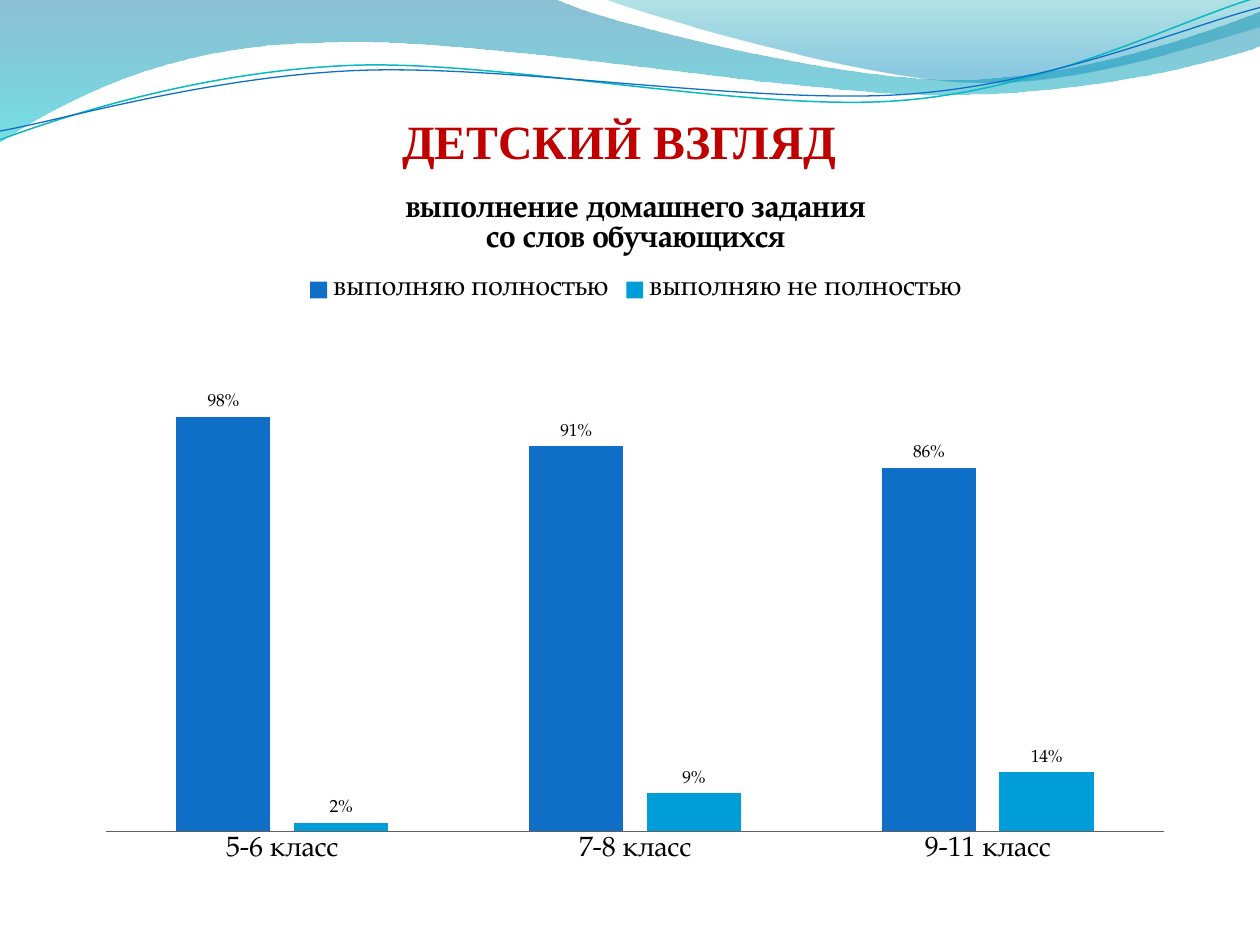
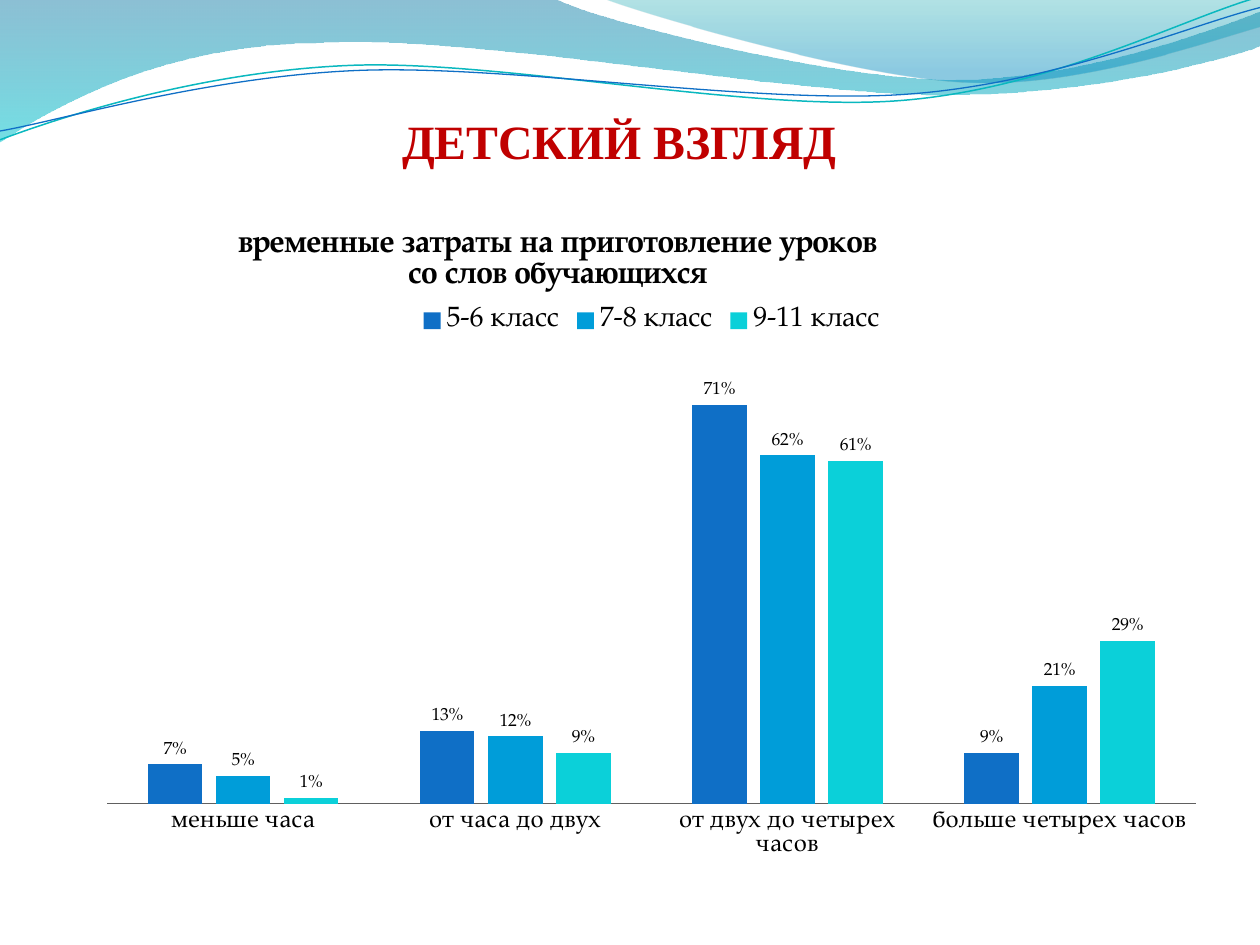
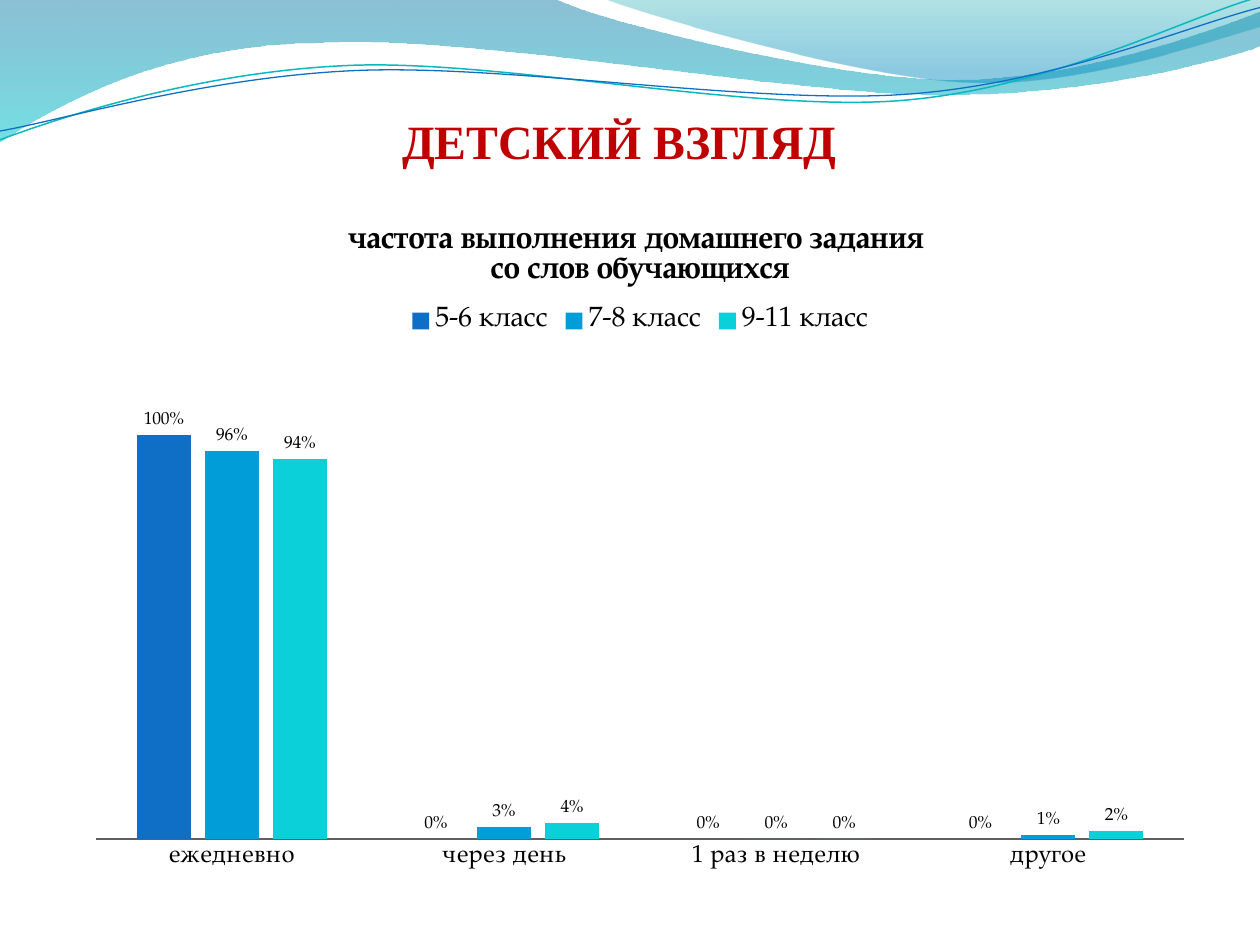
"""Build three slides of column charts on how pupils see their homework."""
import pptx
import pptx.chart.data
import pptx.dml.color
import pptx.enum.chart
import pptx.enum.text
import pptx.oxml.ns
import pptx.util
from lxml import etree

Inches = pptx.util.Inches
Pt = pptx.util.Pt
RGBColor = pptx.dml.color.RGBColor
qn = pptx.oxml.ns.qn

RED = RGBColor(0xC0, 0x00, 0x00)
BLACK = RGBColor(0x00, 0x00, 0x00)
GRAY = RGBColor(0x60, 0x60, 0x60)
BLUE = RGBColor(0x0F, 0x6F, 0xC6)
SKY = RGBColor(0x00, 0x9D, 0xD9)
AQUA = RGBColor(0x0B, 0xD0, 0xD9)
TEAL = RGBColor(0x0A, 0xB8, 0xBF)
SERIES_COLORS = (BLUE, SKY, AQUA)

TITLE = "ДЕТСКИЙ ВЗГЛЯД"
TITLE_FONT = "Times New Roman"
CHART_FONT = "TeX Gyre Pagella"
STEP_TAGS = {2: "a:lnTo", 6: "a:cubicBezTo"}

BANDS = [
    {
        "box": (-0.01, -0.01, 10.02, 1.14),
        "start": (0, -0.01),
        "steps": [
            (4.4, -0.01),
            (4.76, 0.17, 6.64, 0.63, 7.58, 0.63),
            (8.53, 0.63, 9.58, 0.26, 10, 0.09),
            (10.01, 0.36),
            (9.83, 0.44, 8.7, 0.76, 7.46, 0.75),
            (6.22, 0.75, 3.82, 0.28, 2.57, 0.34),
            (1.29, 0.35, 0.46, 0.83, -0.01, 1.13),
            (0, -0.01),
        ],
        "stops": [(0, RGBColor(0x00, 0x74, 0xA1), 45), (1, RGBColor(0x00, 0xC6, 0xCF), 55)],
    },
    {
        "box": (4.79, -0.01, 5.21, 0.7),
        "start": (4.79, -0.01),
        "steps": [
            (5.09, 0.11, 6.82, 0.62, 7.69, 0.65),
            (8.56, 0.69, 9.61, 0.32, 10, 0.21),
            (10, 0),
            (4.79, -0.01),
        ],
        "stops": [(0, RGBColor(0x00, 0xA1, 0xA9), 30), (0.8, RGBColor(0x00, 0x8B, 0xBF), 45)],
    },
]
STRANDS = [
    {
        "box": (0, -0.02, 9.98, 1.13),
        "start": (0, 1.11),
        "steps": [
            (0.48, 0.93, 1.58, 0.57, 2.77, 0.52),
            (3.95, 0.47, 5.93, 0.89, 7.13, 0.8),
            (8.33, 0.71, 9.38, 0.15, 9.98, -0.02),
        ],
        "line": (TEAL, 0.85),
    },
    {
        "box": (0, 0.06, 10, 0.98),
        "start": (0, 1.04),
        "steps": [
            (0.47, 0.96, 1.64, 0.61, 2.83, 0.56),
            (4.03, 0.51, 5.97, 0.83, 7.17, 0.75),
            (8.36, 0.67, 9.41, 0.21, 10, 0.06),
        ],
        "line": (BLUE, 0.75),
    },
]

CHARTS = [
    {
        "title": "выполнение домашнего задания\nсо слов обучающихся",
        "box": (0.67, 1.33, 8.75, 5.64),
        "plot": (0.84, 2.57, 8.4, 4.03),
        "max": 1.2,
        "category_size": 16,
        "categories": ["5-6 класс", "7-8 класс", "9-11 класс"],
        "series": {
            "выполняю полностью": (0.98, 0.91, 0.86),
            "выполняю не полностью": (0.02, 0.09, 0.14),
        },
    },
    {
        "title": "временные затраты на приготовление уроков\nсо слов обучающихся",
        "title_at": (1.86, 1.78),
        "box": (0.67, 1.58, 9, 5.33),
        "plot": (0.85, 2.81, 8.64, 3.57),
        "max": 0.8,
        "category_size": 14,
        "categories": ["меньше часа", "от часа до двух", "от двух до четырех часов", "больше четырех часов"],
        "series": {
            "5-6 класс": (0.07, 0.13, 0.71, 0.09),
            "7-8 класс": (0.05, 0.12, 0.62, 0.21),
            "9-11 класс": (0.01, 0.09, 0.61, 0.29),
        },
    },
    {
        "title": "частота выполнения домашнего задания \nсо слов обучающихся",
        "box": (0.58, 1.58, 9, 5.42),
        "plot": (0.76, 2.81, 8.64, 3.85),
        "max": 1.2,
        "category_size": 14,
        "categories": ["ежедневно", "через день", "1 раз в неделю", "другое"],
        "series": {
            "5-6 класс": (1, 0, 0, 0),
            "7-8 класс": (0.96, 0.03, 0, 0.01),
            "9-11 класс": (0.94, 0.04, 0, 0.02),
        },
    },
]


def add_wave(s, wave):
    """Add a freeform that fills its box, then give it curved steps."""
    left, top, width, height = map(Inches, wave["box"])
    builder = s.shapes.build_freeform(left, top)
    builder.add_line_segments([(left + width, top + height)], close=False)
    sp = builder.convert_to_shape()
    sp.shadow.inherit = False
    outline = next(sp.element.iter(qn("a:path")))
    for child in list(outline):
        outline.remove(child)
    moves = [("a:moveTo", wave["start"])]
    moves += [(STEP_TAGS[len(step)], step) for step in wave["steps"]]
    for tag, step in moves:
        move = etree.SubElement(outline, qn(tag))
        for x, y in zip(step[::2], step[1::2]):
            etree.SubElement(move, qn("a:pt"), x=str(Inches(x) - left), y=str(Inches(y) - top))
    return sp, outline


def add_waves(s):
    for band in BANDS:
        sp, outline = add_wave(s, band)
        etree.SubElement(outline, qn("a:close"))
        sp.line.fill.background()
        sp.fill.gradient()
        sp.fill.gradient_angle = 270
        for stop, (position, color, _) in zip(sp.fill.gradient_stops, band["stops"]):
            stop.position = position
            stop.color.rgb = color
        for clr, (_, _, opacity) in zip(sp.element.iter(qn("a:srgbClr")), band["stops"]):
            etree.SubElement(clr, qn("a:alpha"), val=str(opacity * 1000))
    for strand in STRANDS:
        sp, _ = add_wave(s, strand)
        sp.fill.background()
        color, width = strand["line"]
        sp.line.color.rgb = color
        sp.line.width = Pt(width)


def add_title(s):
    tf = s.shapes.add_textbox(Inches(0.25), Inches(0.83), Inches(9.33), Inches(1.42)).text_frame
    tf.word_wrap = True
    tf.vertical_anchor = pptx.enum.text.MSO_ANCHOR.TOP
    tf.margin_left = tf.margin_right = tf.margin_bottom = 0
    tf.margin_top = Inches(0.06)
    p = tf.paragraphs[0]
    p.text = TITLE
    p.alignment = pptx.enum.text.PP_ALIGN.CENTER
    p.font.name = TITLE_FONT
    p.font.size = Pt(27.3)
    p.font.bold = True
    p.font.color.rgb = RED


def set_layout(parent, box, place, inner=False):
    """Place a chart part, given in slide inches, within the chart's box."""
    layout = parent.find(qn("c:layout"))
    if layout is None:
        layout = etree.Element(qn("c:layout"))
        parent.insert(0, layout)
    manual = etree.SubElement(layout, qn("c:manualLayout"))
    if inner:
        etree.SubElement(manual, qn("c:layoutTarget"), val="inner")
    left, top, width, height = box
    for axis in "xy":
        etree.SubElement(manual, qn(f"c:{axis}Mode"), val="edge")
    starts = (place[0] - left) / width, (place[1] - top) / height
    sizes = [size / full for size, full in zip(place[2:], (width, height))]
    for tag, value in zip("xywh", (*starts, *sizes)):
        etree.SubElement(manual, qn(f"c:{tag}"), val=f"{value:.4f}")


def add_chart(s, content):
    data = pptx.chart.data.CategoryChartData(number_format="0%")
    data.categories = content["categories"]
    for name, values in content["series"].items():
        data.add_series(name, values)
    box = content["box"]
    kind = pptx.enum.chart.XL_CHART_TYPE.COLUMN_CLUSTERED
    chart = s.shapes.add_chart(kind, *map(Inches, box), data).chart
    chart.font.name = CHART_FONT
    chart.font.size = Pt(10)
    chart.font.color.rgb = BLACK

    chart.has_title = True
    tf = chart.chart_title.text_frame
    tf.text = content["title"]
    for p in tf.paragraphs:
        p.font.name = CHART_FONT
        p.font.size = Pt(18)
        p.font.bold = True
        p.font.color.rgb = BLACK
    if "title_at" in content:
        set_layout(chart.chart_title.element, box, content["title_at"])

    chart.has_legend = True
    chart.legend.position = pptx.enum.chart.XL_LEGEND_POSITION.TOP
    chart.legend.include_in_layout = False
    chart.legend.font.size = Pt(16)

    values = chart.value_axis
    values.visible = False
    values.has_major_gridlines = False
    values.minimum_scale = 0
    values.maximum_scale = content["max"]
    categories = chart.category_axis
    categories.major_tick_mark = pptx.enum.chart.XL_TICK_MARK.NONE
    categories.tick_labels.font.size = Pt(content["category_size"])
    categories.format.line.color.rgb = GRAY
    categories.format.line.width = Pt(0.75)

    plot = chart.plots[0]
    plot.vary_by_categories = False
    plot.gap_width = 150
    plot.overlap = -25
    plot.has_data_labels = True
    labels = plot.data_labels
    labels.show_value = True
    labels.number_format = "0%"
    labels.number_format_is_linked = False
    labels.position = pptx.enum.chart.XL_LABEL_POSITION.OUTSIDE_END
    for series, color in zip(plot.series, SERIES_COLORS):
        series.format.fill.solid()
        series.format.fill.fore_color.rgb = color
    plot_area = next(chart.element.iter(qn("c:plotArea")))
    set_layout(plot_area, box, content["plot"], inner=True)


def main():
    prs = pptx.Presentation()
    prs.slide_width = Inches(10)
    prs.slide_height = Inches(7.5)
    for content in CHARTS:
        s = prs.slides.add_slide(prs.slide_layouts[6])
        add_waves(s)
        add_title(s)
        add_chart(s, content)
    prs.save("out.pptx")


if __name__ == "__main__":
    main()
